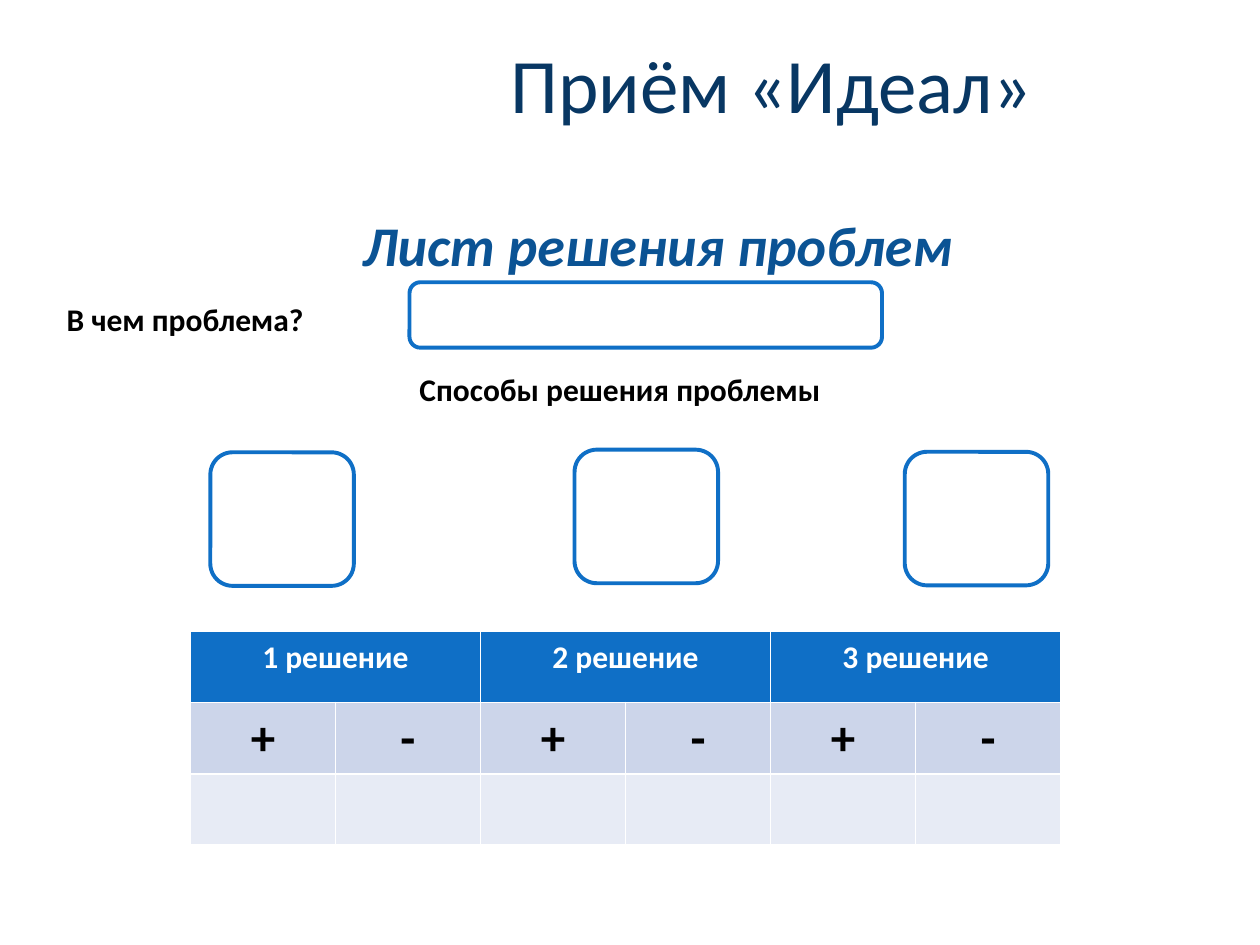
from pptx import Presentation
from pptx.dml.color import RGBColor
from pptx.enum.shapes import MSO_SHAPE as Kind
from pptx.enum.text import PP_ALIGN as Align
from pptx.util import Pt

NAVY = RGBColor(0x08, 0x37, 0x63)
BLUE = RGBColor(0x0B, 0x53, 0x94)
AZURE = RGBColor(0x0F, 0x6F, 0xC6)
PALE = RGBColor(0xCC, 0xD5, 0xEA)
MIST = RGBColor(0xE7, 0xEB, 0xF5)
WHITE = RGBColor(0xFF, 0xFF, 0xFF)
BLACK = RGBColor(0, 0, 0)

TEXTS = [
    ("Приём «Идеал»", (283, 17.3, 316, 60.5), 44, NAVY, False, False, Align.CENTER),
    ("Лист решения проблем", (32.4, 116.6, 687, 81.4), 32, BLUE, True, True, Align.CENTER),
    ("В чем проблема?", (31, 168, 170.6, 29), 18, BLACK, True, False, Align.LEFT),
    ("Способы решения проблемы", (232.6, 207.6, 250, 29), 18, BLACK, True, False, Align.LEFT),
]
FRAMES = [
    (234, 161.3, 270, 37.4),
    (120.2, 258.5, 82, 76.3),
    (328.3, 257, 82, 76.3),
    (517, 258.2, 82, 76.3),
]
HEADS = ["1 решение", "2 решение", "3 решение"]
SIGNS = ["+", "-"]
COL, ROW = 82.9, 40.4
LEFT, TOP = 108.8, 361


def style(para, size, color, bold, italic, align):
    para.alignment = align
    font = para.font
    font.name = "Calibri"
    font.size = Pt(size)
    font.bold = bold
    font.italic = italic
    font.color.rgb = color


def write(shapes, text, area, *look):
    frame = shapes.add_textbox(*map(Pt, area)).text_frame
    frame.word_wrap = True
    frame.text = text
    style(frame.paragraphs[0], *look)


def outline(shapes, area):
    box = shapes.add_shape(Kind.ROUNDED_RECTANGLE, *map(Pt, area))
    box.shadow.inherit = False
    box.fill.solid()
    box.fill.fore_color.rgb = WHITE
    box.line.color.rgb = AZURE
    box.line.width = Pt(2.25)


def compare(shapes):
    count = len(HEADS) * len(SIGNS)
    table = shapes.add_table(3, count, Pt(LEFT), Pt(TOP), Pt(COL * count), Pt(ROW * 3)).table
    for col in table.columns:
        col.width = Pt(COL)
    for row, shade in zip(table.rows, (AZURE, PALE, MIST)):
        row.height = Pt(ROW)
        for cell in row.cells:
            cell.fill.solid()
            cell.fill.fore_color.rgb = shade

    def put(row, col, text, size, color):
        cell = table.cell(row, col)
        cell.text = text
        style(cell.text_frame.paragraphs[0], size, color, True, False, Align.CENTER)

    for i, head in enumerate(HEADS):
        start = i * len(SIGNS)
        table.cell(0, start).merge(table.cell(0, start + len(SIGNS) - 1))
        put(0, start, head, 18, WHITE)
        for j, sign in enumerate(SIGNS):
            put(1, start + j, sign, 28, BLACK)


def main():
    deck = Presentation()
    deck.slide_width, deck.slide_height = Pt(720), Pt(540)
    shapes = deck.slides.add_slide(deck.slide_layouts[6]).shapes
    for item in TEXTS:
        write(shapes, *item)
    for area in FRAMES:
        outline(shapes, area)
    compare(shapes)
    deck.save("out.pptx")


if __name__ == "__main__":
    main()
